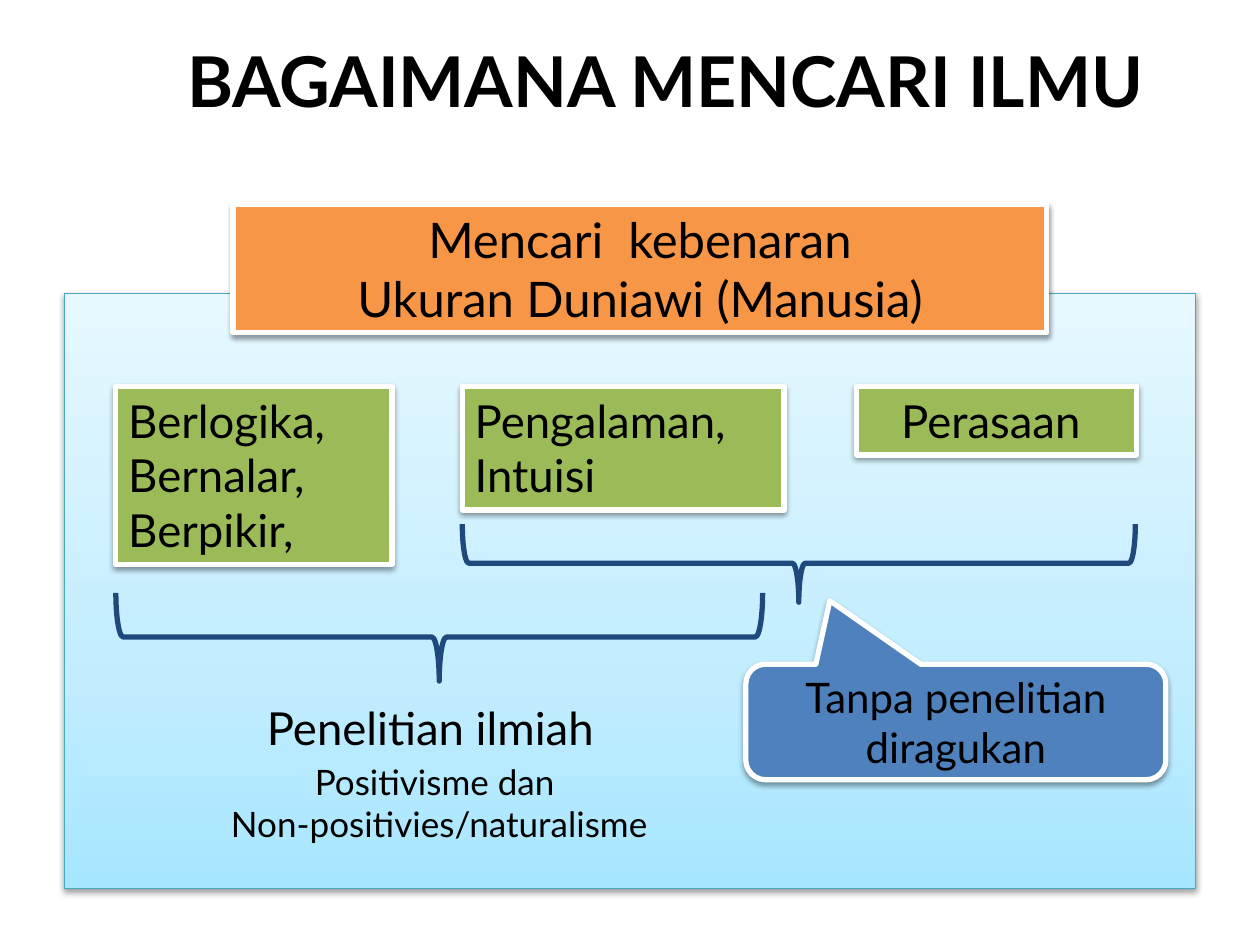
from copy import deepcopy

from lxml.etree import SubElement
from pptx import Presentation
from pptx.dml.color import RGBColor
from pptx.enum.shapes import MSO_SHAPE
from pptx.enum.text import MSO_ANCHOR, MSO_AUTO_SIZE, PP_ALIGN
from pptx.oxml.ns import qn
from pptx.util import Pt

BLACK = RGBColor(0x00, 0x00, 0x00)
WHITE = RGBColor(0xFF, 0xFF, 0xFF)
ORANGE = RGBColor(0xF7, 0x96, 0x46)
GREEN = RGBColor(0x9B, 0xBB, 0x59)
BLUE = RGBColor(0x4F, 0x81, 0xBD)
NAVY = RGBColor(0x1F, 0x49, 0x7D)
TEAL = RGBColor(0x46, 0xAA, 0xC5)
PANEL_STOPS = [
    (0, RGBColor(0xA7, 0xE6, 0xFF)),
    (0.35, RGBColor(0xC1, 0xED, 0xFF)),
    (1, RGBColor(0xE7, 0xF8, 0xFF)),
]
FONT = "Lato"


def set_attributes(target, values):
    for name, value in values.items():
        setattr(target, name, value)


def write_text(shape, lines, size, align=PP_ALIGN.CENTER, bold=False, **frame_format):
    frame = shape.text_frame
    set_attributes(frame, {"word_wrap": True, "vertical_anchor": MSO_ANCHOR.TOP, **frame_format})
    frame.text = "\n".join(lines)
    for paragraph in frame.paragraphs:
        paragraph.alignment = align
        set_attributes(paragraph.font, {"name": FONT, "size": Pt(size), "bold": bold})
        paragraph.font.color.rgb = BLACK


def add_outlined(slide, kind, box, line_color, line_width):
    shape = slide.shapes.add_shape(kind, *map(Pt, box))
    shape.shadow.inherit = False
    shape.line.color.rgb = line_color
    shape.line.width = Pt(line_width)
    return shape


def add_soft_shadow(shape):
    effects = shape._element.spPr.find(qn("a:effectLst"))
    shadow = SubElement(effects, qn("a:outerShdw"), blurRad=str(Pt(3.1)),
                        dist=str(Pt(1.6)), dir="5400000", rotWithShape="0")
    color = SubElement(shadow, qn("a:srgbClr"), val="000000")
    SubElement(color, qn("a:alpha"), val="38000")


def add_panel(slide, box):
    panel = add_outlined(slide, MSO_SHAPE.RECTANGLE, box, TEAL, 0.75)
    panel.fill.gradient()
    panel.fill.gradient_angle = 90
    stop_list = panel._element.spPr.find(".//" + qn("a:gsLst"))
    stop_list.append(deepcopy(stop_list[-1]))
    for stop, (position, color) in zip(panel.fill.gradient_stops, PANEL_STOPS):
        stop.position = position
        stop.color.rgb = color
    add_soft_shadow(panel)


def add_card(slide, box, color, lines, size, kind=MSO_SHAPE.RECTANGLE, **text_format):
    card = add_outlined(slide, kind, box, WHITE, 3)
    card.fill.solid()
    card.fill.fore_color.rgb = color
    add_soft_shadow(card)
    write_text(card, lines, size, **text_format)
    return card


def add_brace(slide, left, top, width, height):
    """Add a left brace turned so that it opens upwards within the given bounds."""
    box = (left + (width - height) / 2, top + (height - width) / 2, height, width)
    brace = add_outlined(slide, MSO_SHAPE.LEFT_BRACE, box, NAVY, 3)
    brace.fill.background()
    brace.rotation = 270


def add_label(slide, box, lines, size, **text_format):
    label = slide.shapes.add_textbox(*map(Pt, box))
    write_text(label, lines, size, **text_format)


def main():
    presentation = Presentation()
    set_attributes(presentation, {"slide_width": Pt(720), "slide_height": Pt(540)})
    slide = presentation.slides.add_slide(presentation.slide_layouts[6])
    grow = {"auto_size": MSO_AUTO_SIZE.SHAPE_TO_FIT_TEXT}

    add_panel(slide, (36.8, 167.8, 646.5, 339.8))
    callout = add_card(slide, (426.2, 379.6, 240, 66), BLUE, ["Tanpa penelitian diragukan"], 24,
                       MSO_SHAPE.ROUNDED_RECTANGULAR_CALLOUT, vertical_anchor=MSO_ANCHOR.MIDDLE)
    for index, value in enumerate((-0.3, -1.05, 0.17)):
        callout.adjustments[index] = value
    add_card(slide, (133.2, 116.8, 465, 73.4), ORANGE,
             ["Mencari  kebenaran", "Ukuran Duniawi (Manusia)"], 28,
             vertical_anchor=MSO_ANCHOR.MIDDLE)

    sources = [
        (66.2, 157.8, 101.8, ["Berlogika,", "Bernalar,", "Berpikir,"], PP_ALIGN.LEFT),
        (264.2, 183.8, 70.5, ["Pengalaman,", "Intuisi"], PP_ALIGN.LEFT),
        (489.6, 160, 39, ["Perasaan "], PP_ALIGN.CENTER),
    ]
    for left, width, height, lines, align in sources:
        add_card(slide, (left, 221, width, height), GREEN, lines, 26, align=align, **grow)

    add_brace(slide, 66.2, 338.8, 369.6, 50.4)
    add_label(slide, (145.4, 396.7, 206, 39), ["Penelitian ilmiah"], 26,
              align=PP_ALIGN.LEFT, word_wrap=False, **grow)
    add_brace(slide, 264.2, 299.5, 384.6, 44.6)
    add_label(slide, (66.2, 431.3, 369.6, 55.5),
              ["Positivisme dan ", "Non-positivies/naturalisme"], 20, **grow)
    add_label(slide, (76.3, 18, 607.7, 90), ["BAGAIMANA MENCARI ILMU"], 40, bold=True)
    presentation.save("out.pptx")


if __name__ == "__main__":
    main()
